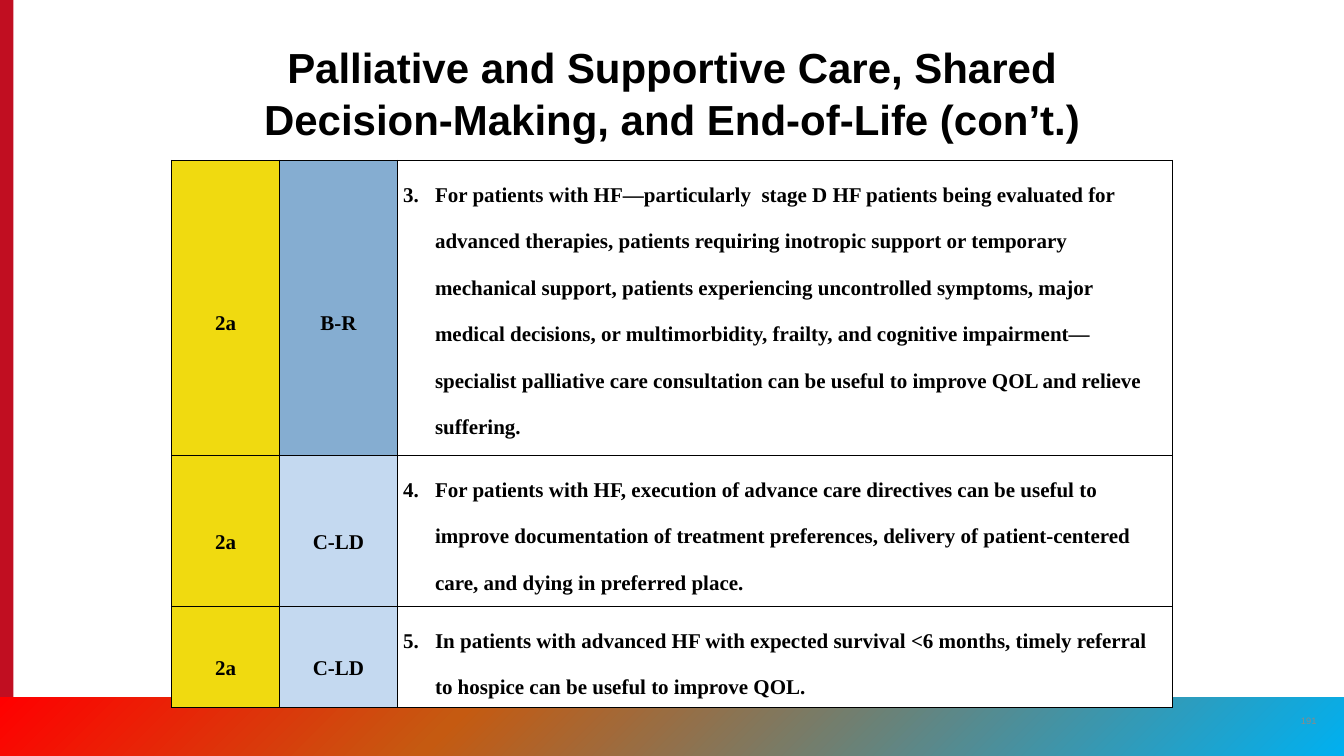
"""Build the slide on palliative and supportive care recommendations."""
from copy import deepcopy
from dataclasses import dataclass

from lxml.etree import SubElement
from pptx import Presentation
from pptx.dml.color import RGBColor
from pptx.enum.shapes import MSO_SHAPE
from pptx.enum.text import MSO_ANCHOR, PP_ALIGN
from pptx.oxml.ns import qn
from pptx.util import Emu, Inches, Pt

WIDTH, HEIGHT = Inches(16), Inches(9)
BLACK, WHITE, GREY = "000000", "FFFFFF", "8A8B8A"
YELLOW, BLUE, PALE_BLUE = "F0DA10", "85ADD1", "C4D9F0"
COLUMN_SHARES = (0.0806, 0.0875, 0.5769)
TABLE_LEFT = 0.1275
HANGING = Inches(0.38)


@dataclass(frozen=True)
class Area:
    """Position and size as shares of the slide."""
    left: float
    top: float
    width: float
    height: float

    def box(self) -> tuple[Emu, Emu, Emu, Emu]:
        """Return the lengths that python-pptx expects."""
        return (Emu(round(self.left * WIDTH)), Emu(round(self.top * HEIGHT)),
                Emu(round(self.width * WIDTH)), Emu(round(self.height * HEIGHT)))


@dataclass(frozen=True)
class Recommendation:
    """One numbered recommendation with its class and level of evidence."""
    number: int
    strength: str
    evidence: str
    evidence_color: str
    advice: str
    height: float


@dataclass(frozen=True)
class Group:
    """Recommendations that share one table."""
    top: float
    rows: tuple[Recommendation, ...]


GROUPS = (
    Group(0.2122, (
        Recommendation(
            3, "2a", "B-R", BLUE,
            "For patients with HF—particularly  stage D HF patients being evaluated for "
            "advanced therapies, patients requiring inotropic support or temporary "
            "mechanical support, patients experiencing uncontrolled symptoms, major "
            "medical decisions, or multimorbidity, frailty, and cognitive impairment—"
            "specialist palliative care consultation can be useful to improve QOL and "
            "relieve suffering.", 0.3),
    )),
    Group(0.6022, (
        Recommendation(
            4, "2a", "C-LD", PALE_BLUE,
            "For patients with HF, execution of advance care directives can be useful to "
            "improve documentation of treatment preferences, delivery of patient-centered "
            "care, and dying in preferred place.", 0.1767),
        Recommendation(
            5, "2a", "C-LD", PALE_BLUE,
            "In patients with advanced HF with expected survival <6 months, timely "
            "referral to hospice can be useful to improve QOL.", 0.1144),
    )),
)


def rgb(color: str) -> RGBColor:
    """Turn a hex string into a colour."""
    return RGBColor.from_string(color)


def style(target, values: dict) -> None:
    """Set every attribute in the dict on the target."""
    for name, value in values.items():
        setattr(target, name, value)


def write(paragraph, text: str, font: str, size: float, color: str,
          bold: bool, spacing: float, align=PP_ALIGN.CENTER) -> None:
    """Fill a paragraph with one formatted run."""
    style(paragraph, {"alignment": align, "line_spacing": spacing})
    run = paragraph.add_run()
    run.text = text
    style(run.font, {"name": font, "size": Pt(size), "bold": bold})
    run.font.color.rgb = rgb(color)


def add_label(slide, area: Area, text: str, size: float, color: str,
              bold: bool, spacing: float, anchor) -> None:
    """Add a centred text box."""
    frame = slide.shapes.add_textbox(*area.box()).text_frame
    style(frame, {"word_wrap": True, "vertical_anchor": anchor})
    write(frame.paragraphs[0], text, "Arial", size, color, bold, spacing)


def add_block(slide, area: Area):
    """Add a rectangle without outline or shadow."""
    block = slide.shapes.add_shape(MSO_SHAPE.RECTANGLE, *area.box())
    block.shadow.inherit = False
    block.line.fill.background()
    return block


def add_frame(slide) -> None:
    """Draw the red side strip and the gradient footer."""
    strip = add_block(slide, Area(0, 0, 0.01, 1))
    strip.fill.solid()
    strip.fill.fore_color.rgb = rgb("C10E21")

    footer = add_block(slide, Area(0, 0.9222, 1, 0.0778))
    footer.fill.gradient()
    footer.fill.gradient_angle = 315
    last_stop = footer.fill._fill._gradFill.gsLst[-1]
    last_stop.addprevious(deepcopy(last_stop))
    stops = ((0, "FF0000"), (0.34, "C55A11"), (1, "00B0F0"))
    for stop, (position, color) in zip(footer.fill.gradient_stops, stops):
        stop.position = position
        stop.color.rgb = rgb(color)


def add_borders(cell) -> None:
    """Give a cell a thin black line on each side."""
    properties = cell._tc.get_or_add_tcPr()
    for side in ("a:lnL", "a:lnR", "a:lnT", "a:lnB"):
        line = SubElement(properties, qn(side), w=str(Pt(1)))
        SubElement(SubElement(line, qn("a:solidFill")), qn("a:srgbClr"), val=BLACK)


def add_number(paragraph, number: int) -> None:
    """Number a paragraph with a hanging indent."""
    properties = paragraph._p.get_or_add_pPr()
    properties.set("marL", str(HANGING))
    properties.set("indent", str(-HANGING))
    SubElement(properties, qn("a:buFont"), typeface="+mj-lt")
    SubElement(properties, qn("a:buAutoNum"), type="arabicPeriod", startAt=str(number))


def add_group(slide, group: Group) -> None:
    """Draw one table of recommendations."""
    area = Area(TABLE_LEFT, group.top, sum(COLUMN_SHARES),
                sum(row.height for row in group.rows))
    table = slide.shapes.add_table(len(group.rows), len(COLUMN_SHARES), *area.box()).table
    style(table, {"first_row": False, "horz_banding": False})
    for column, share in zip(table.columns, COLUMN_SHARES):
        column.width = Emu(round(share * WIDTH))
    for row, item in zip(table.rows, group.rows):
        row.height = Emu(round(item.height * HEIGHT))
        contents = ((item.strength, YELLOW), (item.evidence, item.evidence_color),
                    (item.advice, WHITE))
        for cell, (text, color) in zip(row.cells, contents):
            is_advice = text == item.advice
            style(cell, {
                "margin_left": Inches(0.07), "margin_right": Inches(0.07),
                "margin_top": 0, "margin_bottom": 0,
                "vertical_anchor": MSO_ANCHOR.TOP if is_advice else MSO_ANCHOR.MIDDLE,
            })
            add_borders(cell)
            cell.fill.solid()
            cell.fill.fore_color.rgb = rgb(color)
            paragraph = cell.text_frame.paragraphs[0]
            if is_advice:
                add_number(paragraph, item.number)
            write(paragraph, text, "Times New Roman", 18, BLACK, True, 2,
                  PP_ALIGN.LEFT if is_advice else PP_ALIGN.CENTER)


def main() -> None:
    """Build and save the slide."""
    deck = Presentation()
    style(deck, {"slide_width": WIDTH, "slide_height": HEIGHT})
    slide = deck.slides.add_slide(deck.slide_layouts[6])
    add_frame(slide)
    add_label(slide, Area(0.9588, 0.9267, 0.03, 0.0533), "191", 8, GREY, False, 1,
              MSO_ANCHOR.MIDDLE)
    add_label(slide, Area(0.18, 0.0467, 0.6406, 0.1111),
              "Palliative and Supportive Care, Shared Decision-Making, "
              "and End-of-Life (con’t.)", 36, BLACK, True, 1.04, MSO_ANCHOR.TOP)
    for group in GROUPS:
        add_group(slide, group)


    deck.save("out.pptx")


if __name__ == "__main__":
    main()
